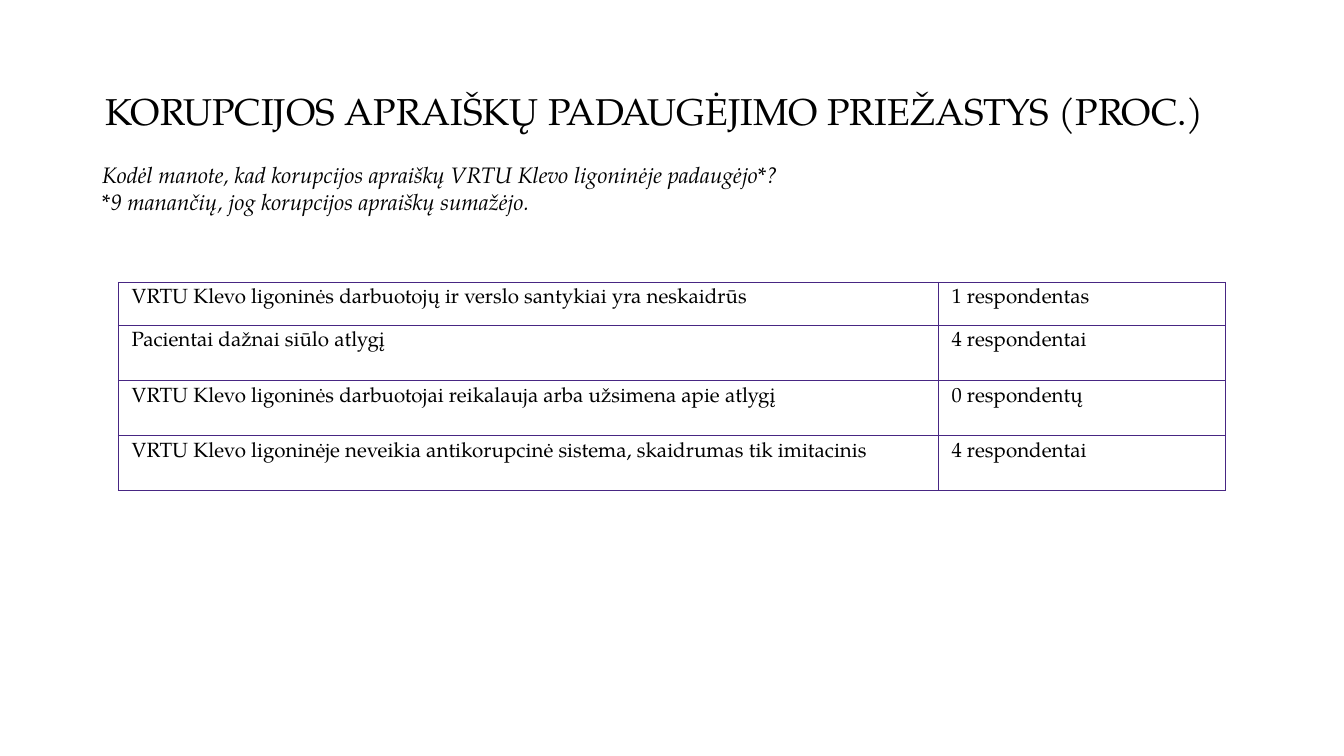
from lxml import etree
from pptx import Presentation
from pptx.dml.color import RGBColor
from pptx.enum import shapes, text
from pptx.oxml import ns
from pptx.util import Inches, Pt

FONT = "TeX Gyre Pagella"
BLACK, WHITE, PURPLE = "000000", "FFFFFF", "482683"
SLIDE_WIDTH = 10

TITLE = "KORUPCIJOS APRAIŠKŲ PADAUGĖJIMO PRIEŽASTYS (PROC.)"
QUESTION = [
    "Kodėl manote, kad korupcijos apraiškų VRTU Klevo ligoninėje padaugėjo*?",
    "*9 manančių, jog korupcijos apraiškų sumažėjo.",
]
REASONS = [
    ("VRTU Klevo ligoninės darbuotojų ir verslo santykiai yra neskaidrūs", "1 respondentas"),
    ("Pacientai dažnai siūlo atlygį", "4 respondentai"),
    ("VRTU Klevo ligoninės darbuotojai reikalauja arba užsimena apie atlygį", "0 respondentų"),
    ("VRTU Klevo ligoninėje neveikia antikorupcinė sistema, skaidrumas tik imitacinis",
     "4 respondentai"),
]
COLUMN_WIDTHS = [6.1, 2.14]
ROW_HEIGHTS = [0.32] + [0.41] * 3


def color(value):
    return RGBColor.from_string(value)


def write(frame, lines, size, italic=False):
    frame.word_wrap = True
    frame.text = "\n".join(lines)
    for paragraph in frame.paragraphs:
        paragraph.alignment = text.PP_ALIGN.LEFT
        font = paragraph.font
        font.name, font.size, font.italic = FONT, Pt(size), italic
        font.color.rgb = color(BLACK)


def add_borders(cell, line_color, points):
    properties = cell._tc.get_or_add_tcPr()
    for position, side in enumerate(("lnL", "lnR", "lnT", "lnB")):
        line = etree.Element(ns.qn(f"a:{side}"), w=str(Pt(points)))
        fill = etree.SubElement(line, ns.qn("a:solidFill"))
        etree.SubElement(fill, ns.qn("a:srgbClr"), val=line_color)
        properties.insert(position, line)


def main():
    prs = Presentation()
    prs.slide_width, prs.slide_height = Inches(SLIDE_WIDTH), Inches(SLIDE_WIDTH * 9 / 16)
    slide = prs.slides.add_slide(prs.slide_layouts[6])

    title = slide.shapes.add_textbox(Inches(0.69), Inches(0.3), Inches(8.62), Inches(1.09))
    write(title.text_frame, [TITLE], 20)
    title.text_frame.vertical_anchor = text.MSO_ANCHOR.MIDDLE
    title.text_frame.paragraphs[0].line_spacing = 0.9

    question = slide.shapes.add_shape(shapes.MSO_SHAPE.RECTANGLE, Inches(0.66), Inches(1.15),
                                      Inches(8.62), Inches(3.92))
    question.shadow.inherit = False
    question.fill.background()
    question.line.color.rgb = color(WHITE)
    question.line.width = Pt(0.75)
    question.text_frame.vertical_anchor = text.MSO_ANCHOR.TOP
    write(question.text_frame, QUESTION, 12, italic=True)

    table = slide.shapes.add_table(len(REASONS), len(COLUMN_WIDTHS), Inches(0.88), Inches(2.1),
                                   Inches(sum(COLUMN_WIDTHS)), Inches(sum(ROW_HEIGHTS))).table
    table.first_row = table.horz_banding = False
    for column, width in zip(table.columns, COLUMN_WIDTHS):
        column.width = Inches(width)
    for row, height, reason in zip(table.rows, ROW_HEIGHTS, REASONS):
        row.height = Inches(height)
        for cell, wording in zip(row.cells, reason):
            write(cell.text_frame, [wording], 11)
            cell.fill.background()
            add_borders(cell, PURPLE, 0.5)

    prs.save("out.pptx")


if __name__ == "__main__":
    main()
